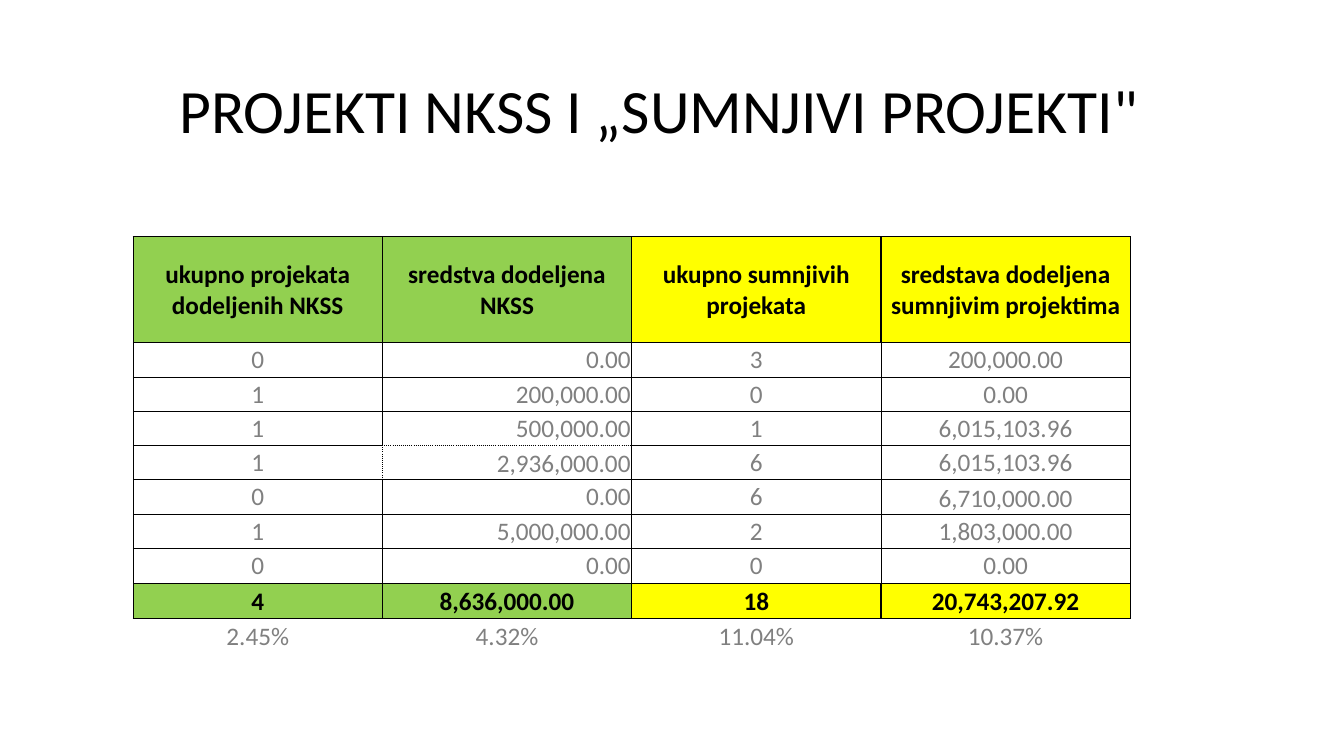
from dataclasses import dataclass

from lxml.etree import SubElement
from pptx import Presentation
from pptx.dml.color import RGBColor
from pptx.enum.text import MSO_ANCHOR, PP_ALIGN
from pptx.oxml.ns import qn
from pptx.util import Inches, Pt


@dataclass(frozen=True)
class Theme:
    font: str = "Calibri"
    title_size: int = 44
    table_size: int = 18
    black: str = "000000"
    grey: str = "808080"
    green: str = "92D050"
    yellow: str = "FFFF00"
    thin: float = 0.5
    thick: float = 1


theme = Theme()


def style_paragraph(paragraph, size, color, bold=False, align=PP_ALIGN.CENTER):
    paragraph.alignment = align
    for run in paragraph.runs:
        run.font.name = theme.font
        run.font.size = Pt(size)
        run.font.bold = bold
        run.font.color.rgb = RGBColor.from_string(color)


def add_border(cell, side, width, dash="solid"):
    """Draw one side (L, R, T or B) of a cell; zero width hides it."""
    line = SubElement(cell._tc.get_or_add_tcPr(), qn(f"a:ln{side}"), w=str(Pt(width)))
    if width:
        fill = SubElement(line, qn("a:solidFill"))
        SubElement(fill, qn("a:srgbClr"), val=theme.black)
        SubElement(line, qn("a:prstDash"), val=dash)
    else:
        SubElement(line, qn("a:noFill"))


headings = ["ukupno projekata dodeljenih NKSS", "sredstva dodeljena NKSS",
            "ukupno sumnjivih projekata", "sredstava dodeljena sumnjivim projektima"]
projects = [
    ["0", "0.00", "3", "200,000.00"],
    ["1", "200,000.00", "0", "0.00"],
    ["1", "500,000.00", "1", "6,015,103.96"],
    ["1", "2,936,000.00", "6", "6,015,103.96"],
    ["0", "0.00", "6", "6,710,000.00"],
    ["1", "5,000,000.00", "2", "1,803,000.00"],
    ["0", "0.00", "0", "0.00"],
]
totals = ["4", "8,636,000.00", "18", "20,743,207.92"]
shares = ["2.45%", "4.32%", "11.04%", "10.37%"]
rows = [headings, *projects, totals, shares]

row_heights = [1.05] + [0.34] * 6 + [0.35, 0.35, 0.34]
column_fills = [theme.green, theme.green, theme.yellow, theme.yellow]
total_row = len(projects) + 1
share_row = total_row + 1
strong_rows = (0, total_row)
dotted_sides = {(3, 1): "B", (4, 0): "R", (4, 1): "LT"}
bottom_cells = {(4, 1), (5, 3)}

prs = Presentation()
prs.slide_width, prs.slide_height = Inches(13.33), Inches(7.5)
slide = prs.slides.add_slide(prs.slide_layouts[5])

title = slide.shapes.title
title.left, title.top = Inches(0.92), Inches(0.4)
title.width, title.height = Inches(11.24), Inches(1.45)
title.text_frame.text = "PROJEKTI NKSS I „SUMNJIVI PROJEKTI\""
title.text_frame.vertical_anchor = MSO_ANCHOR.MIDDLE
title.text_frame.paragraphs[0].line_spacing = 0.9
style_paragraph(title.text_frame.paragraphs[0], theme.title_size, theme.black)

table = slide.shapes.add_table(
    len(rows), len(headings), Inches(1.32), Inches(2.35), Inches(9.89), Inches(4.13)
).table
table.first_row = False
table.horz_banding = False
for row, height in zip(table.rows, row_heights):
    row.height = Inches(height)

for r, values in enumerate(rows):
    strong = r in strong_rows
    for c, value in enumerate(values):
        cell = table.cell(r, c)
        cell.text_frame.text = value
        cell.margin_left = cell.margin_right = cell.margin_top = Inches(0.01)
        cell.margin_bottom = 0
        cell.vertical_anchor = MSO_ANCHOR.BOTTOM if (r, c) in bottom_cells else MSO_ANCHOR.MIDDLE
        amount = c == 1 and 0 < r < total_row
        style_paragraph(cell.text_frame.paragraphs[0], theme.table_size,
                        theme.black if strong else theme.grey, strong,
                        PP_ALIGN.RIGHT if amount else PP_ALIGN.CENTER)

        for side in "LRTB":
            beside_strong = (side == "T" and r - 1 in strong_rows) or (
                side == "B" and r + 1 in strong_rows)
            if strong or beside_strong:
                width = theme.thick
            else:
                width = 0 if r == share_row else theme.thin
            dotted = side in dotted_sides.get((r, c), "")
            add_border(cell, side, width, "sysDot" if dotted else "solid")

        if strong:
            cell.fill.solid()
            cell.fill.fore_color.rgb = RGBColor.from_string(column_fills[c])
        else:
            cell.fill.background()

prs.save("out.pptx")
